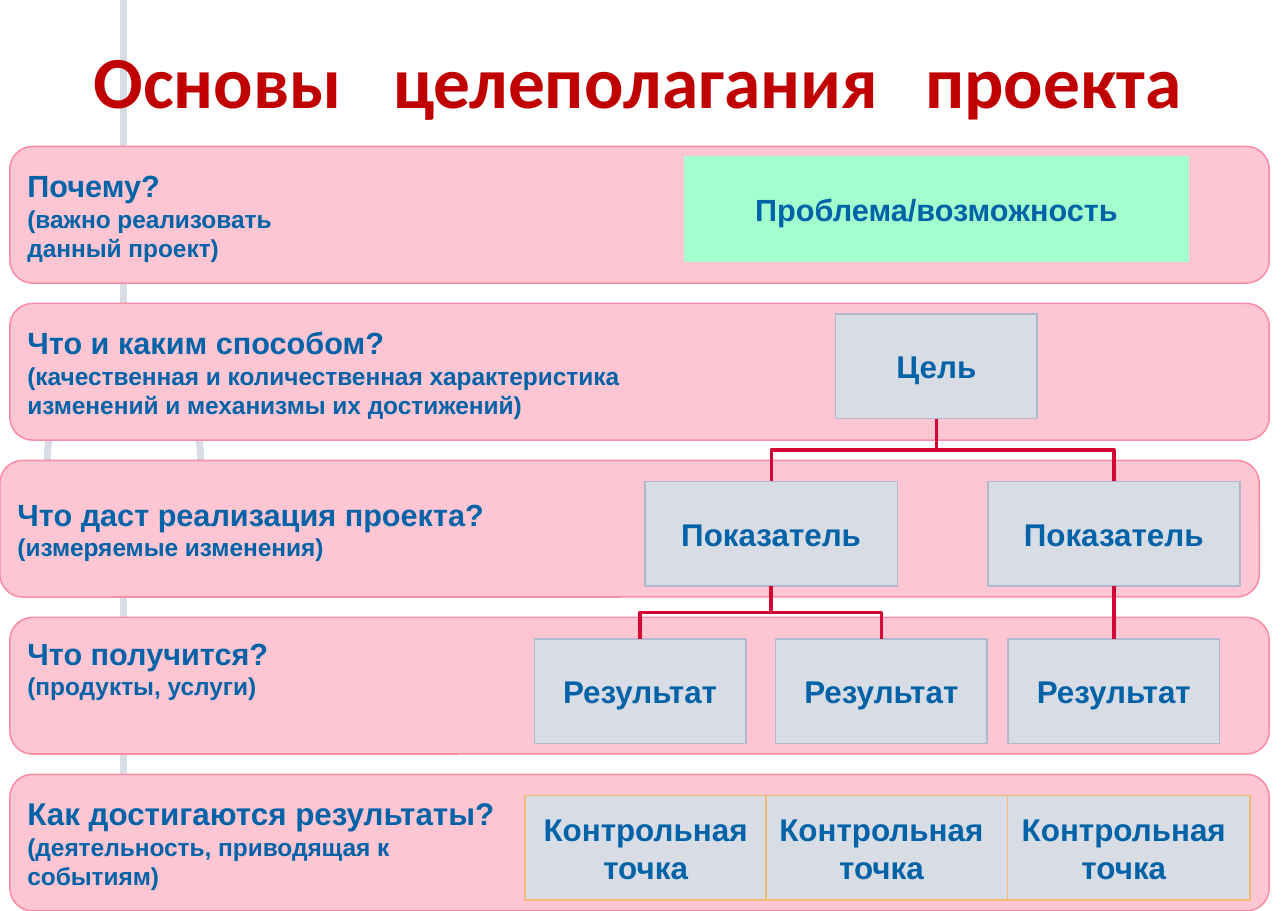
import pptx
import pptx.util
import pptx.dml.color
import pptx.enum.shapes
import pptx.enum.text
import pptx.oxml
import pptx.oxml.ns
from pptx.util import Inches

COLORS = {
    "background": "FFFFFF",
    "decor": "D8DCE5",
    "band": "FEC6D3",
    "band_edge": "FC8CA6",
    "problem": "A3FFCD",
    "node": "D8DCE5",
    "node_edge": "B0B9CB",
    "checkpoint_edge": "F2BA77",
    "link": "D30535",
    "text": "0062A7",
    "title": "C00000",
}
SHAPES = pptx.enum.shapes.MSO_SHAPE
CONNECTORS = pptx.enum.shapes.MSO_CONNECTOR
ALIGN = pptx.enum.text.PP_ALIGN

BAND_TOP, BAND_STEP = 1.33, 1.425
BAND_WIDTH, BAND_HEIGHT = 11.43, 1.24
NODE_HEIGHT = 0.95
GOAL_TOP, INDICATOR_TOP, RESULT_TOP, CHECKPOINT_TOP = 2.85, 4.37, 5.8, 7.22
GOAL_CENTER = 8.5
INDICATOR_CENTERS = (7, 10.11)
RESULT_CENTERS = (5.81, 8, 10.11)

BANDS = [
    (0.09, 20, ["Почему?", "(важно реализовать", "данный проект)"]),
    (0.09, 20, ["Что и каким способом?",
                "(качественная и количественная характеристика",
                "изменений и механизмы их достижений)"]),
    (0, 20, ["Что даст реализация проекта?", "(измеряемые изменения)"]),
    (0.09, 20, ["Что получится?", "(продукты, услуги)"]),
    (0.09, 20.5, ["Как достигаются результаты?",
                  "(деятельность, приводящая к", "событиям)"]),
]
RESULTS_BAND = 3


def rgb(name):
    return pptx.dml.color.RGBColor.from_string(COLORS[name])


def format_runs(paragraph, size, color="text", face="Arial"):
    for run in paragraph.runs:
        run.font.name = face
        run.font.size = pptx.util.Pt(size)
        run.font.bold = True
        run.font.color.rgb = rgb(color)


def add_block(slide, preset, box, fill, edge, edge_width=1):
    block = slide.shapes.add_shape(preset, *map(Inches, box))
    block.shadow.inherit = False
    block.fill.solid()
    block.fill.fore_color.rgb = rgb(fill)
    block.line.color.rgb = rgb(edge)
    block.line.width = pptx.util.Pt(edge_width)
    return block


def add_band(slide, index, left, heading_size, lines):
    box = (left, BAND_TOP + index * BAND_STEP, BAND_WIDTH, BAND_HEIGHT)
    band = add_block(slide, SHAPES.ROUNDED_RECTANGLE, box, "band", "band_edge")
    frame = band.text_frame
    frame.vertical_anchor = pptx.enum.text.MSO_ANCHOR.MIDDLE
    frame.text = "\n".join(lines)
    for number, paragraph in enumerate(frame.paragraphs):
        paragraph.alignment = ALIGN.LEFT
        format_runs(paragraph, 16 if number else heading_size)
    return band


def add_node(slide, center, top, width, label, size=20.5, fill="node", edge="node_edge"):
    box = (center - width / 2, top, width, NODE_HEIGHT)
    node = add_block(slide, SHAPES.RECTANGLE, box, fill, edge)
    frame = node.text_frame
    frame.word_wrap = True
    frame.vertical_anchor = pptx.enum.text.MSO_ANCHOR.MIDDLE
    frame.text = label
    frame.paragraphs[0].alignment = ALIGN.CENTER
    format_runs(frame.paragraphs[0], size)


def add_line(slide, kind, start, end, color, width):
    line = slide.shapes.add_connector(kind, *map(Inches, start + end))
    line.line.color.rgb = rgb(color)
    line.line.width = pptx.util.Pt(width)
    properties = line._element.spPr
    properties.append(pptx.oxml.parse_xml(
        f"<a:effectLst {pptx.oxml.ns.nsdecls('a')}/>"))
    return line


def add_branch(slide, parent, top, child, bottom):
    if parent == child:
        add_line(slide, CONNECTORS.STRAIGHT, (parent, top), (child, bottom), "link", 2.25)
        return
    middle_x, middle_y = (parent + child) / 2, (top + bottom) / 2
    half_drop, half_reach = (bottom - top) / 2, abs(child - parent) / 2
    side = 1 if child > parent else -1
    start = (middle_x + side * half_drop, middle_y - half_reach)
    end = (middle_x - side * half_drop, middle_y + half_reach)
    branch = add_line(slide, CONNECTORS.ELBOW, start, end, "link", 2.25)
    frame = branch._element.spPr.find(pptx.oxml.ns.qn("a:xfrm"))
    frame.set("rot", str((270 if side > 0 else 90) * 60000))


def add_title(slide):
    title = slide.shapes.add_textbox(*map(Inches, (0.75, 0.27, 10.5, 0.91)))
    frame = title.text_frame
    frame.word_wrap = True
    paragraph = frame.paragraphs[0]
    paragraph.text = "Основы\tцелеполагания\tпроекта"
    stops = "".join(f'<a:tab pos="{Inches(stop)}" algn="l"/>' for stop in (2.72, 7.55))
    paragraph._p.get_or_add_pPr().append(pptx.oxml.parse_xml(
        f"<a:tabLst {pptx.oxml.ns.nsdecls('a')}>{stops}</a:tabLst>"))
    format_runs(paragraph, 48, "title", "Calibri")


def main():
    deck = pptx.Presentation()
    deck.slide_width, deck.slide_height = Inches(11.69), Inches(8.27)
    slide = deck.slides.add_slide(deck.slide_layouts[6])

    add_line(slide, CONNECTORS.STRAIGHT, (1.12, 8.27), (1.12, 0), "decor", 4.5)
    add_block(slide, SHAPES.OVAL, (0.43, 3.44, 1.39, 1.39), "background", "decor", 4.5)

    bands = [add_band(slide, index, *band) for index, band in enumerate(BANDS)]
    bands[RESULTS_BAND].text_frame.margin_bottom = Inches(0.38)

    add_node(slide, GOAL_CENTER, 1.42, 4.57, "Проблема/возможность", 20, "problem", "problem")
    add_node(slide, GOAL_CENTER, GOAL_TOP, 1.83, "Цель")
    for center in INDICATOR_CENTERS:
        add_node(slide, center, INDICATOR_TOP, 2.29, "Показатель")
    for center, width in ((10.2, 2.29), (8, 2.29), (5.86, 2.19)):
        add_node(slide, center, CHECKPOINT_TOP, width, "Контрольная точка",
                 edge="checkpoint_edge")
    for center in RESULT_CENTERS:
        add_node(slide, center, RESULT_TOP, 1.92, "Результат")

    for center in INDICATOR_CENTERS:
        add_branch(slide, GOAL_CENTER, GOAL_TOP + NODE_HEIGHT, center, INDICATOR_TOP)
    left_indicator, right_indicator = INDICATOR_CENTERS
    parents = (left_indicator, left_indicator, right_indicator)
    for parent, center in zip(parents, RESULT_CENTERS):
        add_branch(slide, parent, INDICATOR_TOP + NODE_HEIGHT, center, RESULT_TOP)

    add_title(slide)
    deck.save("out.pptx")


if __name__ == "__main__":
    main()
